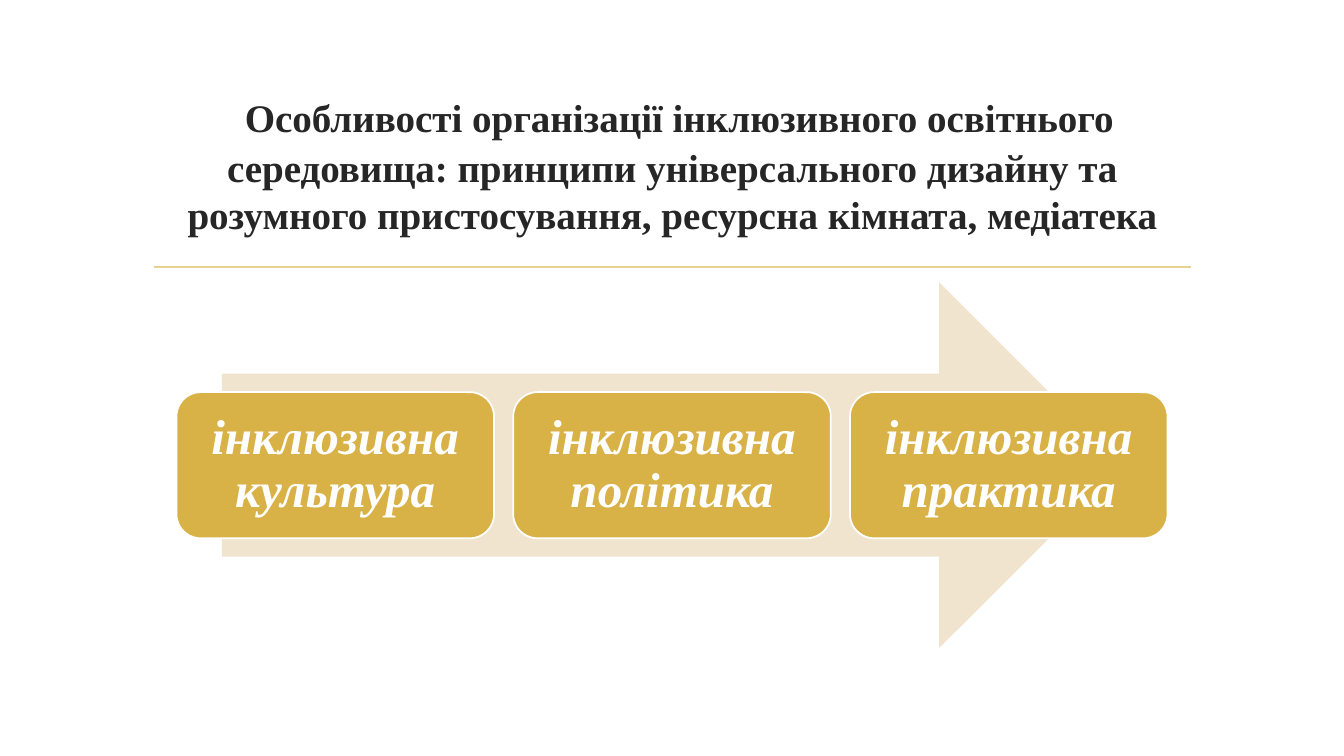
from dataclasses import dataclass

import pptx
import pptx.dml.color
import pptx.enum.shapes
import pptx.enum.text
import pptx.util
from lxml import etree
from pptx.oxml.ns import qn

Inches = pptx.util.Inches
Pt = pptx.util.Pt
Shapes = pptx.enum.shapes.MSO_SHAPE


@dataclass(frozen=True)
class Theme:
    font: str = "Times New Roman"
    ink: str = "262626"
    white: str = "FFFFFF"
    gold: str = "D9B247"
    rule: str = "E8D191"
    sand: str = "F1E4CF"
    lead_size: float = 39.6
    title_size: float = 27.9
    step_size: float = 35
    line_width: float = 1.25


THEME = Theme()
TITLE = ("Особливості організації інклюзивного освітнього середовища: "
         "принципи універсального дизайну та розумного пристосування, "
         "ресурсна кімната, медіатека")
STEPS = ["інклюзивна культура", "інклюзивна політика", "інклюзивна практика"]


def color(value):
    return pptx.dml.color.RGBColor.from_string(value)


def add_span(para, text, size, ink, italic=False):
    span = para.add_run()
    span.text = text
    span.font.name = THEME.font
    span.font.size = Pt(size)
    span.font.bold = True
    span.font.italic = italic
    span.font.color.rgb = color(ink)


def add_box(page, kind, left, top, width, height, fill):
    box = page.shapes.add_shape(
        kind, Inches(left), Inches(top), Inches(width), Inches(height))
    box.shadow.inherit = False
    box.fill.solid()
    box.fill.fore_color.rgb = color(fill)
    box.line.fill.background()
    return box


def set_frame(box, side, top, bottom):
    frame = box.text_frame
    frame.word_wrap = True
    frame.auto_size = pptx.enum.text.MSO_AUTO_SIZE.NONE
    frame.vertical_anchor = pptx.enum.text.MSO_ANCHOR.MIDDLE
    frame.margin_left = frame.margin_right = Inches(side)
    frame.margin_top, frame.margin_bottom = Inches(top), Inches(bottom)
    para = frame.paragraphs[0]
    para.alignment = pptx.enum.text.PP_ALIGN.CENTER
    return para


def draw_title(page, left, top, width, height):
    title = page.shapes.title
    title.left, title.top = Inches(left), Inches(top)
    title.width, title.height = Inches(width), Inches(height)
    # The deeper bottom margin lifts the text above the rule
    para = set_frame(title, 0.1, 0, 0.45)
    add_span(para, " ", THEME.lead_size, THEME.ink)
    add_span(para, TITLE, THEME.title_size, THEME.ink)

    # Rule under the title
    inset, rule_top = 0.11, Inches(top + height + 0.15)
    rule = page.shapes.add_connector(
        pptx.enum.shapes.MSO_CONNECTOR.STRAIGHT,
        Inches(left + inset), rule_top,
        Inches(left + width - inset), rule_top)
    rule.line.color.rgb = color(THEME.rule)
    rule.line.width = Pt(THEME.line_width)
    etree.SubElement(rule._element.spPr, qn("a:effectLst"))


def draw_process(page, left, top, width, height):
    # Arrow behind the steps
    margin = 0.45
    add_box(page, Shapes.RIGHT_ARROW, left + margin, top,
            width - 2 * margin, height, THEME.sand)

    # Steps in equal columns, centred on the arrow
    gap, step_height = 0.19, 1.45
    step_width = (width - gap * (len(STEPS) - 1)) / len(STEPS)
    step_top = top + (height - step_height) / 2
    for index, label in enumerate(STEPS):
        step = add_box(page, Shapes.ROUNDED_RECTANGLE,
                       left + index * (step_width + gap), step_top,
                       step_width, step_height, THEME.gold)
        step.line.color.rgb = color(THEME.white)
        step.line.width = Pt(THEME.line_width)
        para = set_frame(step, 0.22, 0.15, 0.15)
        para.line_spacing = 0.9
        add_span(para, label, THEME.step_size, THEME.white, italic=True)


def main():
    deck = pptx.Presentation()
    deck.slide_width, deck.slide_height = Inches(13.33), Inches(7.5)
    page = deck.slides.add_slide(deck.slide_layouts.get_by_name("Title Only"))
    draw_title(page, 1.42, 1.07, 10.5, 1.43)
    draw_process(page, 1.75, 2.8, 9.83, 3.63)
    deck.save("out.pptx")


if __name__ == "__main__":
    main()
